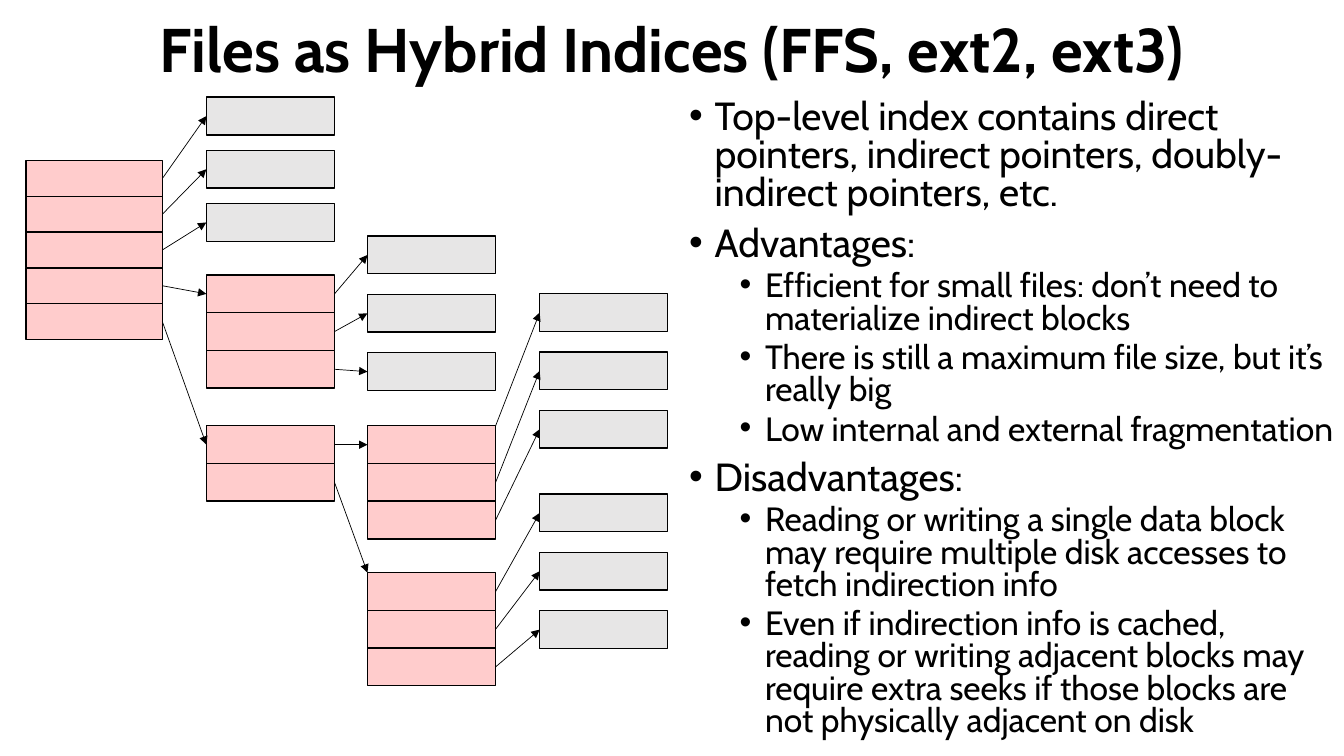
from collections import namedtuple
from dataclasses import dataclass

from lxml import etree
from pptx import Presentation
from pptx import util as u
from pptx.dml.color import RGBColor
from pptx.enum import shapes, text
from pptx.oxml.ns import qn

Box = namedtuple("Box", "left top width height")


@dataclass(frozen=True)
class Theme:
    font: str = "Cabin"
    ink: RGBColor = RGBColor(0, 0, 0)
    index_fill: RGBColor = RGBColor(0xFF, 0xCC, 0xCC)
    data_fill: RGBColor = RGBColor(0xE7, 0xE6, 0xE6)
    title_size: int = 44
    body_sizes: tuple = (28, 24)
    block_line: float = 1
    arrow_line: float = 0.5


THEME = Theme()
TITLE = "Files as Hybrid Indices (FFS, ext2, ext3)"
POINTS = [
    (0, "Top-level index contains direct pointers, indirect pointers, "
        "doubly-indirect pointers, etc."),
    (0, "Advantages:"),
    (1, "Efficient for small files: don’t need to materialize indirect blocks"),
    (1, "There is still a maximum file size, but it’s really big"),
    (1, "Low internal and external fragmentation"),
    (0, "Disadvantages:"),
    (1, "Reading or writing a single data block may require multiple disk "
        "accesses to fetch indirection info"),
    (1, "Even if indirection info is cached, reading or writing adjacent blocks "
        "may require extra seeks if those blocks are not physically adjacent on disk"),
]


def place(shape, box):
    shape.left, shape.top, shape.width, shape.height = (u.Cm(n) for n in box)


def format_runs(para, size, bold=False):
    for span in para.runs:
        span.font.name = THEME.font
        span.font.size = u.Pt(size)
        span.font.bold = bold
        span.font.color.rgb = THEME.ink


def add_title(page, box):
    title = page.shapes.title
    place(title, box)
    frame = title.text_frame
    frame.text = TITLE
    frame.word_wrap = True
    frame.auto_size = text.MSO_AUTO_SIZE.NONE
    frame.vertical_anchor = text.MSO_ANCHOR.MIDDLE
    para = frame.paragraphs[0]
    para.alignment = text.PP_ALIGN.CENTER
    para.line_spacing = 0.9
    format_runs(para, THEME.title_size, bold=True)


def add_bullet(para, level):
    """Give the paragraph a round bullet with a hanging indent."""
    props = para._p.get_or_add_pPr()
    props.set("marL", str(u.Cm(0.64 + 1.27 * level)))
    props.set("indent", str(-u.Cm(0.64)))
    etree.SubElement(props, qn("a:buFont"), typeface="Arial")
    etree.SubElement(props, qn("a:buChar"), char="•")


def add_points(page, box):
    frame = page.shapes.add_textbox(*(u.Cm(n) for n in box)).text_frame
    frame.word_wrap = True
    for number, (level, wording) in enumerate(POINTS):
        para = frame.add_paragraph() if number else frame.paragraphs[0]
        para.text = wording
        para.level = level
        para.line_spacing = 0.8
        para.space_before = u.Pt(5 if level else 10)
        add_bullet(para, level)
        format_runs(para, THEME.body_sizes[level])


def add_stack(page, box, count, pitch, fill):
    """Stack equal blocks downwards; box is the first of them."""
    stack = []
    for row in range(count):
        block = page.shapes.add_shape(shapes.MSO_SHAPE.RECTANGLE, 0, 0, 0, 0)
        place(block, box._replace(top=box.top + row * pitch))
        block.shadow.inherit = False
        block.fill.solid()
        block.fill.fore_color.rgb = fill
        block.line.color.rgb = THEME.ink
        block.line.width = u.Pt(THEME.block_line)
        stack.append(block)
    return stack


def add_pointer(page, source, target, source_at=0.5, target_at=0.5):
    """Draw an arrow from a right side to a left side, at fractions of their heights."""
    arrow = page.shapes.add_connector(
        shapes.MSO_CONNECTOR.STRAIGHT,
        source.left + source.width, source.top + int(source.height * source_at),
        target.left, target.top + int(target.height * target_at))
    if source_at == 0.5:
        arrow.begin_connect(source, 3)
    if target_at == 0.5:
        arrow.end_connect(target, 1)
    arrow.line.color.rgb = THEME.ink
    arrow.line.width = u.Pt(THEME.arrow_line)
    etree.SubElement(arrow.line._get_or_add_ln(), qn("a:tailEnd"), type="triangle")
    etree.SubElement(arrow._element.spPr, qn("a:effectLst"))


def add_diagram(page, box):
    width, height, root_height = 3.23, 0.95, 0.9
    columns = [box.left + x for x in (0, 4.54, 8.6, 12.94)]

    def index(column, top, count):
        first = Box(columns[column], box.top + top, width, height)
        return add_stack(page, first, count, height, THEME.index_fill)

    def data(column, top, pitch=1.47):
        first = Box(columns[column], box.top + top, width, height)
        return add_stack(page, first, 3, pitch, THEME.data_fill)

    root = add_stack(page, Box(columns[0], box.top + 1.6, 3.43, root_height),
                     5, root_height, THEME.index_fill)
    direct = data(1, 0, pitch=1.34)
    indirect = index(1, 4.48, 3)
    indirect_data = data(2, 3.5)
    doubly = index(1, 8.28, 2)
    upper, lower = index(2, 8.28, 3), index(2, 11.98, 3)
    upper_data, lower_data = data(3, 4.95), data(3, 10)

    sources = root + indirect + upper[1:] + lower + doubly[:1]
    targets = (direct + [indirect[0], doubly[0]] + indirect_data
               + upper_data[1:] + lower_data + upper[:1])
    for source, target in zip(sources, targets):
        add_pointer(page, source, target)
    add_pointer(page, upper[0], upper_data[0], source_at=0)
    add_pointer(page, doubly[1], lower[0], target_at=0)


def main():
    deck = Presentation()
    deck.slide_width, deck.slide_height = u.Cm(33.87), u.Cm(19.05)
    page = deck.slides.add_slide(deck.slide_layouts[5])
    add_title(page, Box(2.34, 0.03, 29.2, 2.57))
    add_points(page, Box(17.12, 2.41, 16.76, 16.43))
    add_diagram(page, Box(0.66, 2.45, 16.17, 14.83))
    deck.save("out.pptx")


if __name__ == "__main__":
    main()
